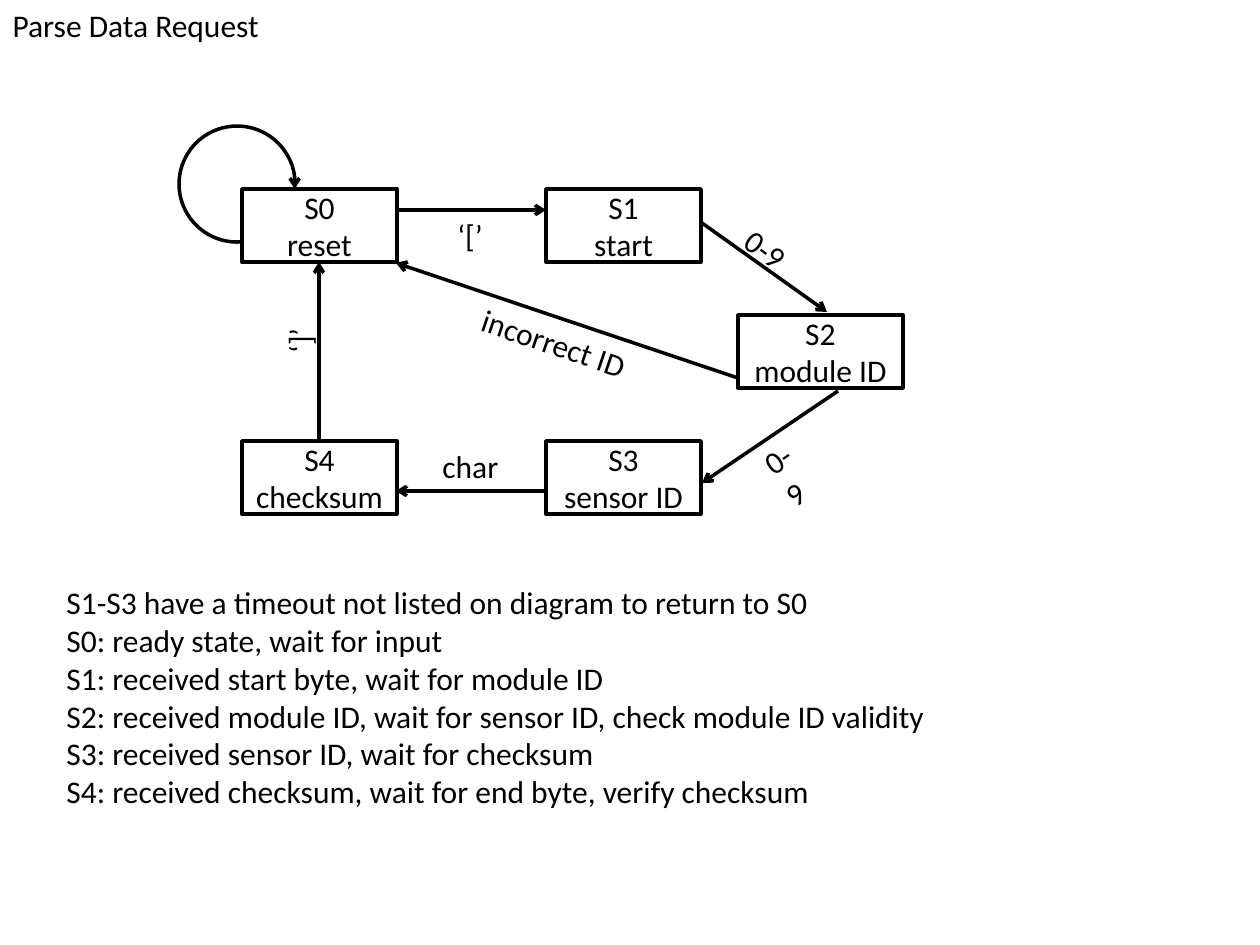
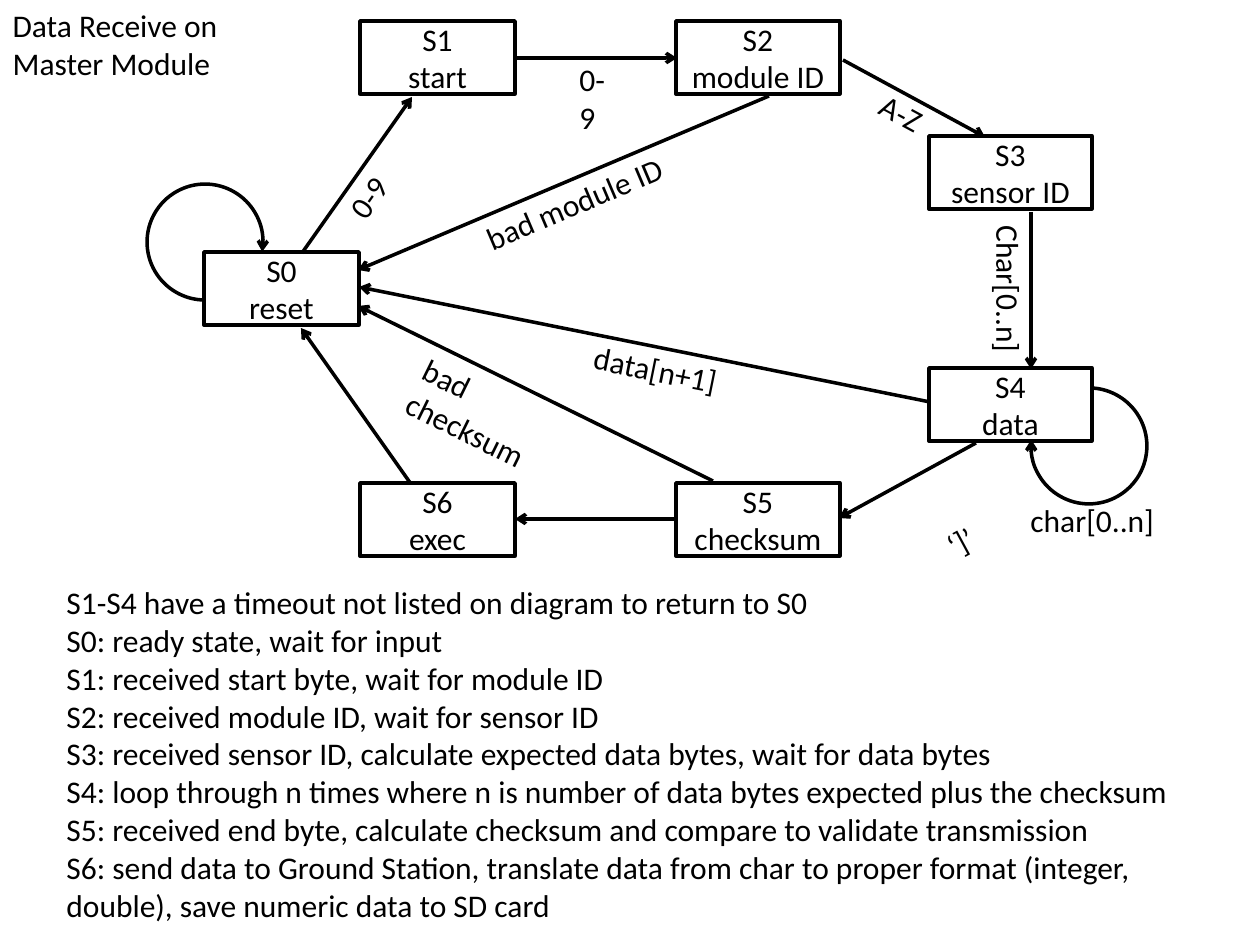
from pptx import Presentation
from pptx.dml.color import RGBColor
from pptx.enum.shapes import MSO_CONNECTOR, MSO_SHAPE
from pptx.enum.text import MSO_ANCHOR, MSO_AUTO_SIZE, PP_ALIGN
from pptx.oxml.ns import qn
from pptx.util import Emu, Pt
from lxml.etree import SubElement

COLORS = {"ink": "000000", "paper": "FFFFFF"}
FONT, TEXT_SIZE, LINE_WIDTH = "Calibri", 18, 2
SLIDE_SIZE = (1260, 945)
EMU_PER_PX = 914400 / 126
STATE_HEIGHT, LOOP_SIZE = 73, 116
LABEL_HEIGHTS = {1: 50, 2: 89}

# states: code, name, left, top, width
# transitions: start, end
# labels: text, left, top, width, angle, lines
# loops: left, top, angle, start, end
DIAGRAMS = [
    {
        "title": ["Parse Data Request"],
        "states": [
            ("S0", "reset", 242, 189, 155),
            ("S1", "start", 546, 189, 155),
            ("S2", "module ID", 738, 315, 165),
            ("S3", "sensor ID", 546, 441, 155),
            ("S4", "checksum", 242, 441, 155),
        ],
        "transitions": [
            ((396, 210), (546, 210)),
            ((702, 223), (827, 312)),
            ((838, 391), (702, 483)),
            ((548, 491), (396, 491)),
            ((319, 441), (319, 262)),
            ((738, 378), (396, 263)),
        ],
        "labels": [
            ("‘[’", 445, 210, 52, 0, 1),
            ("0-9", 732, 226, 73, 37.2, 1),
            ("0-9", 762, 427, 64, 325.7, 2),
            ("char", 430, 441, 82, 0, 1),
            ("‘]’", 273, 315, 52, 270, 1),
            ("incorrect ID", 467, 318, 176, 18.8, 1),
        ],
        "loops": [(179, 126, 180, 158.97, 110.99)],
        "notes": [
            "S1-S3 have a timeout not listed on diagram to return to S0",
            "S0: ready state, wait for input",
            "S1: received start byte, wait for module ID",
            "S2: received module ID, wait for sensor ID, check module ID validity",
            "S3: received sensor ID, wait for checksum",
            "S4: received checksum, wait for end byte, verify checksum",
        ],
        "notes_height": 242,
    },
    {
        "title": ["Data Receive on", "Master Module"],
        "states": [
            ("S0", "reset", 204, 252, 155),
            ("S1", "start", 360, 21, 155),
            ("S2", "module ID", 676, 21, 164),
            ("S3", "sensor ID", 929, 136, 163),
            ("S4", "data", 929, 368, 163),
            ("S5", "checksum", 676, 483, 164),
            ("S6", "exec", 360, 483, 155),
        ],
        "transitions": [
            ((302, 253), (412, 97)),
            ((514, 58), (677, 58)),
            ((843, 60), (985, 137)),
            ((1031, 212), (1031, 369)),
            ((976, 443), (839, 518)),
            ((677, 519), (515, 519)),
            ((411, 484), (301, 328)),
            ((769, 96), (358, 270)),
            ((930, 402), (359, 287)),
            ((713, 481), (358, 306)),
        ],
        "labels": [
            ("0-9", 333, 169, 74, 305, 1),
            ("0-9", 567, 54, 63, 0, 2),
            ("A-Z", 868, 88, 68, 28.4, 1),
            ("Char[0..n]", 932, 265, 154, 90, 1),
            ("char[0..n]", 1018, 495, 150, 0, 1),
            ("‘]’", 935, 516, 52, 331.6, 1),
            ("bad module ID", 467, 174, 233, 337, 1),
            ("data[n+1]", 581, 344, 151, 11.4, 1),
            ("bad checksum", 396, 377, 190, 26.3, 2),
        ],
        "loops": [
            (147, 184, 180, 161.98, 113.73),
            (1031, 388, 0, 164.82, 111.74),
        ],
        "notes": [
            "S1-S4 have a timeout not listed on diagram to return to S0",
            "S0: ready state, wait for input",
            "S1: received start byte, wait for module ID",
            "S2: received module ID, wait for sensor ID",
            "S3: received sensor ID, calculate expected data bytes, wait for data bytes",
            "S4: loop through n times where n is number of data bytes expected plus the checksum",
            "S5: received end byte, calculate checksum and compare to validate transmission",
            "S6: send data to Ground Station, translate data from char to proper format "
            "(integer, double), save numeric data to SD card",
        ],
        "notes_height": 357,
    },
]


def px(*lengths):
    return [Emu(round(length * EMU_PER_PX)) for length in lengths]


def color(name):
    return RGBColor.from_string(COLORS[name])


def write(part, lines, align=PP_ALIGN.LEFT, anchor=MSO_ANCHOR.TOP, wrap=True):
    frame = part.text_frame
    frame.auto_size = MSO_AUTO_SIZE.NONE
    frame.word_wrap = wrap
    frame.vertical_anchor = anchor
    for index, line in enumerate(lines):
        paragraph = frame.add_paragraph() if index else frame.paragraphs[0]
        paragraph.alignment = align
        run = paragraph.add_run()
        run.text = line
        run.font.name = FONT
        run.font.size = Pt(TEXT_SIZE)
        run.font.color.rgb = color("ink")


def ink_line(part, arrow=False):
    part.line.color.rgb = color("ink")
    part.line.width = Pt(LINE_WIDTH)
    if arrow:
        outline = part.element.spPr.find(qn("a:ln"))
        SubElement(outline, qn("a:tailEnd"), type="arrow")


def add_outline(slide, preset, box, arrow=False):
    outline = slide.shapes.add_shape(preset, *px(*box))
    outline.shadow.inherit = False
    outline.fill.background()
    ink_line(outline, arrow)
    return outline


def add_transition(slide, start, end):
    transition = slide.shapes.add_connector(MSO_CONNECTOR.STRAIGHT, *px(*start, *end))
    ink_line(transition, arrow=True)
    SubElement(transition.element.spPr, qn("a:effectLst"))


def add_text(slide, lines, box, angle=0, wrap=True):
    text = slide.shapes.add_textbox(*px(*box))
    text.rotation = angle
    write(text, lines, wrap=wrap)


def add_diagram(deck, diagram):
    slide = deck.slides.add_slide(deck.slide_layouts[5])
    slide.background.fill.solid()
    slide.background.fill.fore_color.rgb = color("paper")

    title = slide.shapes.title
    lines = diagram["title"]
    title.left, title.top, title.width, title.height = px(0, 0, 300, LABEL_HEIGHTS[len(lines)])
    write(title, lines)

    for code, name, left, top, width in diagram["states"]:
        state = add_outline(slide, MSO_SHAPE.RECTANGLE, (left, top, width, STATE_HEIGHT))
        write(state, [code, name], PP_ALIGN.CENTER, MSO_ANCHOR.MIDDLE, wrap=False)
    for start, end in diagram["transitions"]:
        add_transition(slide, start, end)
    for left, top, angle, start, end in diagram["loops"]:
        loop = add_outline(slide, MSO_SHAPE.ARC, (left, top, LOOP_SIZE, LOOP_SIZE), arrow=True)
        loop.rotation = angle
        loop.adjustments[0], loop.adjustments[1] = start, end
    for text, left, top, width, angle, rows in diagram["labels"]:
        add_text(slide, [text], (left, top, width, LABEL_HEIGHTS[rows]), angle, wrap=rows > 1)
    add_text(slide, diagram["notes"], (54, 577, 1164, diagram["notes_height"]))


def main():
    deck = Presentation()
    deck.slide_width, deck.slide_height = px(*SLIDE_SIZE)
    for diagram in DIAGRAMS:
        add_diagram(deck, diagram)
    deck.save("out.pptx")


if __name__ == "__main__":
    main()
